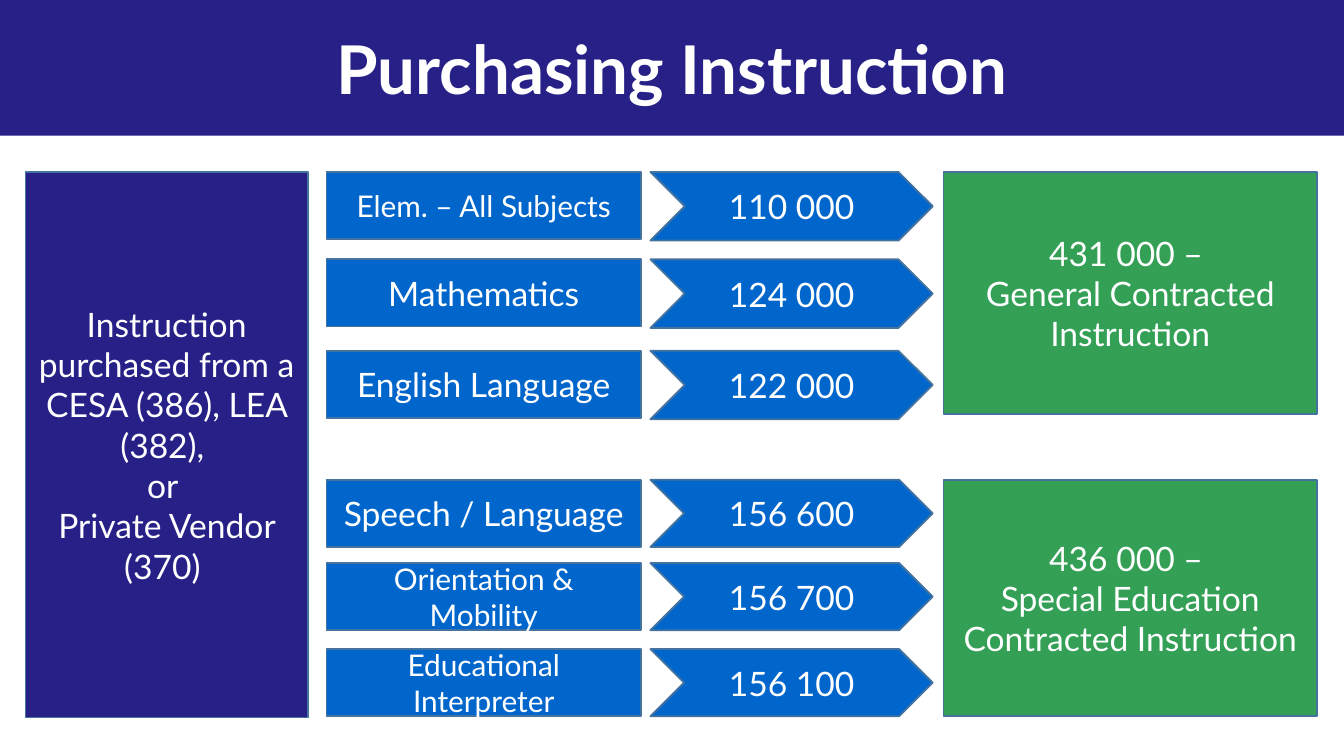
"""Build the Purchasing Instruction slide: source, subjects, codes and accounts."""
from pptx import Presentation as Deck
from pptx.dml.color import RGBColor as Color
from pptx.enum.shapes import MSO_SHAPE as Kind
from pptx.enum.text import MSO_ANCHOR as Anchor, PP_ALIGN as Align
from pptx.util import Inches, Pt

TITLE = "Purchasing Instruction"
SOURCE = (
    "Instruction purchased from a CESA (386), LEA (382), ",
    "or ",
    "Private Vendor (370) ",
)
GROUPS = [
    {
        "lines": ("431 000 – ", "General Contracted Instruction"),
        "tall": 1.8,
        "arrow": 0.51,
        "rows": [
            ("Elem. – All Subjects", "110 000", 1.28, "small"),
            ("Mathematics", "124 000", 1.93, "body"),
            ("English Language", "122 000", 2.61, "body"),
        ],
    },
    {
        "lines": ("436 000 – ", "Special Education Contracted Instruction"),
        "tall": 1.76,
        "arrow": 0.5,
        "rows": [
            ("Speech / Language", "156 600", 3.57, "body"),
            ("Orientation & Mobility", "156 700", 4.19, "small"),
            ("Educational Interpreter", "156 100", 4.83, "small"),
        ],
    },
]

THEME = {
    "font": "Lato",
    "navy": "262087",
    "blue": "0066CC",
    "green": "33A056",
    "edge": "43739E",
    "text": "FFFFFF",
    "title": 36,
    "body": 18,
    "small": 16,
}

WIDE = 10
HIGH = WIDE * 9 / 16
COLS = {
    "source": (0.19, 2.1),
    "subject": (2.43, 2.34),
    "code": (4.84, 2.1),
    "account": (7.02, 2.78),
}
BAND, TOP, ROW = 1.01, 1.28, 0.5

deck = Deck()
deck.slide_width, deck.slide_height = Inches(WIDE), Inches(HIGH)
slide = deck.slides.add_slide(deck.slide_layouts[6])


def tint(name):
    return Color.from_string(THEME[name])


def write(shape, text, *, size="body", bold=False, inset=0.1):
    frame = shape.text_frame
    frame.word_wrap = True
    frame.vertical_anchor = Anchor.MIDDLE
    frame.margin_left = frame.margin_right = Inches(inset)
    para = frame.paragraphs[0]
    para.text = text
    para.alignment = Align.CENTER
    for run in para.runs:
        font = run.font
        font.name, font.size, font.bold = THEME["font"], Pt(THEME[size]), bold
        font.color.rgb = tint("text")


def block(col, top, tall, fill, kind=Kind.RECTANGLE, edge=True):
    left, wide = col
    shape = slide.shapes.add_shape(kind, *map(Inches, (left, top, wide, tall)))
    shape.shadow.inherit = False
    shape.fill.solid()
    shape.fill.fore_color.rgb = tint(fill)
    if edge:
        shape.line.color.rgb = tint("edge")
        shape.line.width = Pt(1)
    else:
        shape.line.fill.background()
    return shape


write(block((0, WIDE), 0, BAND, "navy", edge=False), TITLE, size="title", bold=True)
write(block(COLS["source"], TOP, 4.06, "navy"), "\n".join(SOURCE), inset=0.08)

for group in GROUPS:
    first = group["rows"][0][2]
    account = block(COLS["account"], first, group["tall"], "green")
    write(account, "\n".join(group["lines"]))
    for subject, code, top, size in group["rows"]:
        write(block(COLS["subject"], top, ROW, "blue"), subject, size=size)
        arrow = block(COLS["code"], top, group["arrow"], "blue", Kind.CHEVRON)
        write(arrow, code)

deck.save("out.pptx")
